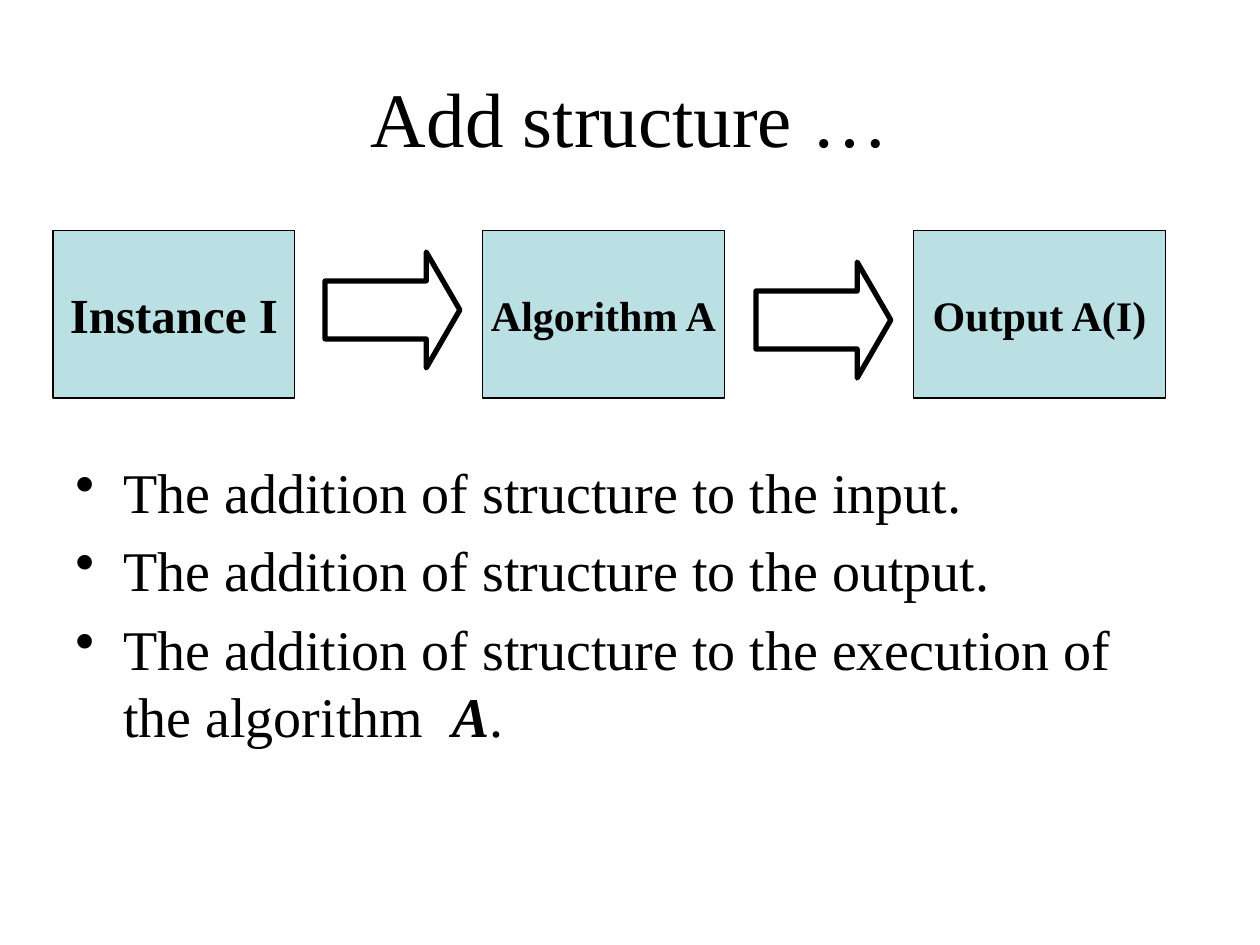
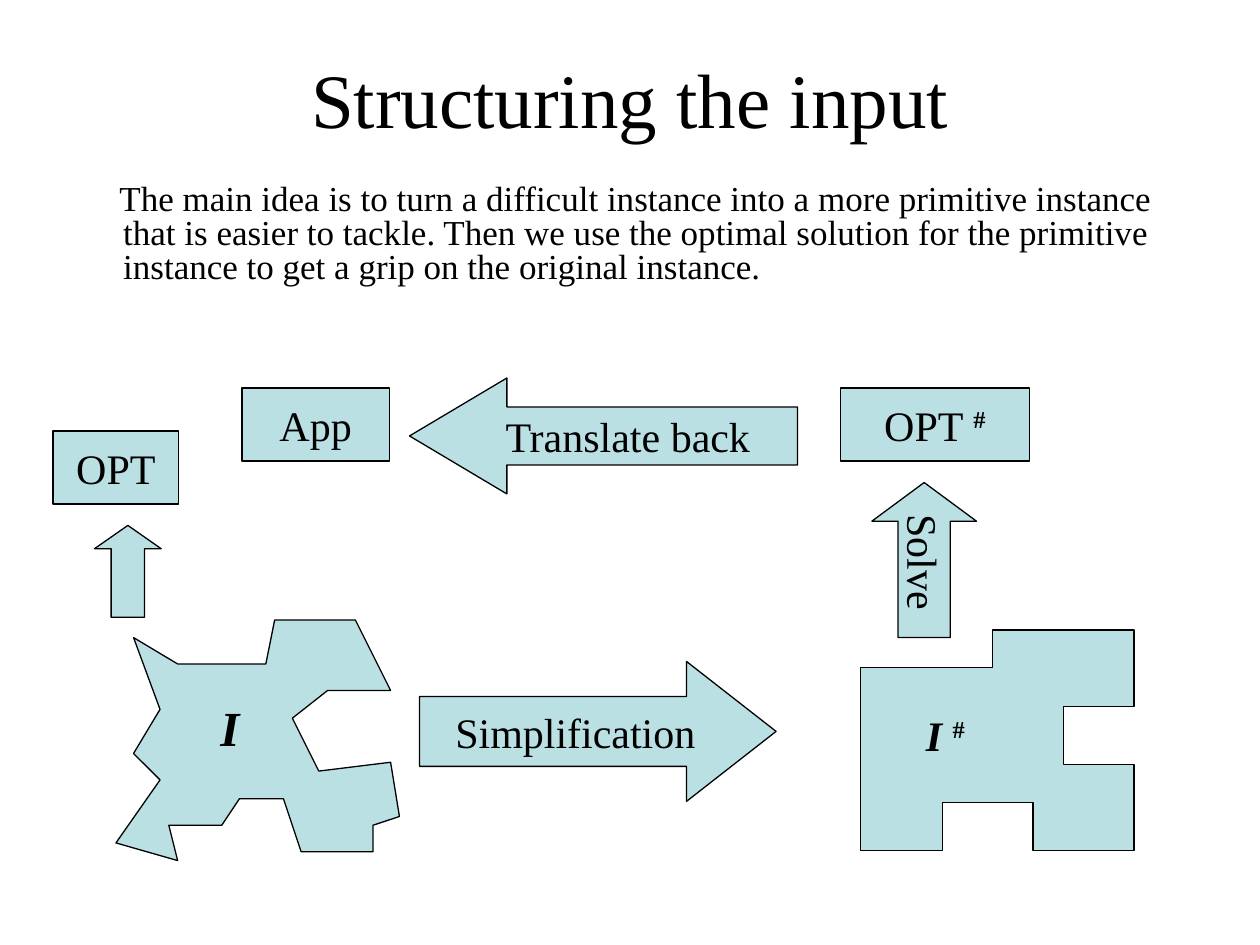
import pptx
import pptx.dml.color
import pptx.enum.shapes
import pptx.enum.text
import pptx.oxml
import pptx.util
from pptx.util import Inches

BLACK = pptx.dml.color.RGBColor(0x00, 0x00, 0x00)
PALE_TEAL = pptx.dml.color.RGBColor(0xBB, 0xE0, 0xE3)
FONT = "Times New Roman"
SHAPES = pptx.enum.shapes.MSO_SHAPE
CENTER = pptx.enum.text.PP_ALIGN.CENTER
MIDDLE = pptx.enum.text.MSO_ANCHOR.MIDDLE


def write(para, text, size=24, bold=False, italic=False, align=None, raised=False):
    """Add one span of text to a paragraph."""
    span = para.add_run()
    span.text = text
    span.font.name = FONT
    span.font.size = pptx.util.Pt(size)
    span.font.bold = bold
    span.font.italic = italic
    span.font.color.rgb = BLACK
    if align is not None:
        para.alignment = align
    if raised:
        span.font._element.set("baseline", "30000")


def style(shape, fill=PALE_TEAL, line_width=0.75):
    """Give a shape its flat fill, outline and centred, unwrapped text frame."""
    shape.shadow.inherit = False
    if fill is None:
        shape.fill.background()
    else:
        shape.fill.solid()
        shape.fill.fore_color.rgb = fill
    shape.line.color.rgb = BLACK
    shape.line.width = pptx.util.Pt(line_width)
    shape.text_frame.word_wrap = False
    shape.text_frame.vertical_anchor = MIDDLE


deck = pptx.Presentation()
deck.slide_width = Inches(10)
deck.slide_height = Inches(7.5)

# Pages with their titles
pages = []
for title, height in [("Add structure …", 1.25), ("Structuring the input", 0.95)]:
    page = deck.slides.add_slide(deck.slide_layouts[6])
    box = page.shapes.add_textbox(Inches(0.5), Inches(0.3), Inches(9), Inches(height))
    box.text_frame.word_wrap = True
    box.text_frame.vertical_anchor = MIDDLE
    write(box.text_frame.paragraphs[0], title, size=44, align=CENTER)
    pages.append(page)
structure_page, input_page = pages

# Slide 1: bullet list
bullets = [
    [("The addition of structure to the input", {}), (".", {"italic": True})],
    [("The addition of structure to the output.", {})],
    [("The addition of structure to the execution of the algorithm  ", {}),
     ("A", {"bold": True, "italic": True}), (".", {})],
]
box = structure_page.shapes.add_textbox(Inches(0.5), Inches(3.58), Inches(9), Inches(3.12))
box.text_frame.word_wrap = True
for index, spans in enumerate(bullets):
    para = box.text_frame.paragraphs[0] if index == 0 else box.text_frame.add_paragraph()
    para.space_before = pptx.util.Pt(6.4)
    for text, options in spans:
        write(para, text, size=32, **options)
    properties = para._p.get_or_add_pPr()
    properties.set("marL", str(Inches(0.38)))
    properties.set("indent", str(Inches(-0.38)))
    bullet = pptx.oxml.parse_xml(
        '<a:buChar xmlns:a="http://schemas.openxmlformats.org/drawingml/2006/main" char="•"/>')
    properties.append(bullet)

# Slide 1: instance, algorithm and output boxes
for left, width, text, size in [
    (0.42, 1.92, "Instance I", 28),
    (3.83, 1.92, "Algorithm A", 24),
    (7.25, 2, "Output A(I)", 24),
]:
    stage = structure_page.shapes.add_shape(
        SHAPES.RECTANGLE, Inches(left), Inches(1.83), Inches(width), Inches(1.33))
    style(stage)
    write(stage.text_frame.paragraphs[0], text, size=size, bold=True, align=CENTER)

# Slide 1: arrows between the boxes
for left, top in [(2.58, 2), (6, 2.08)]:
    arrow = structure_page.shapes.add_shape(
        SHAPES.RIGHT_ARROW, Inches(left), Inches(top), Inches(1.07), Inches(0.92))
    arrow.adjustments[1] = 0.29
    style(arrow, fill=None, line_width=3)

# Slide 2: main idea
box = input_page.shapes.add_textbox(Inches(0.5), Inches(1.42), Inches(9), Inches(1.33))
box.text_frame.word_wrap = True
para = box.text_frame.paragraphs[0]
para.line_spacing = 0.8
para.space_before = pptx.util.Pt(4)
para._p.get_or_add_pPr().set("marL", str(Inches(0.38)))
para._p.get_or_add_pPr().set("indent", str(Inches(-0.03)))
write(para, "The main idea is to turn a difficult instance into a more primitive instance "
      "that is easier to tackle. Then we use the optimal solution for the primitive "
      "instance to get a grip on the original instance.", size=20)

# Slide 2: outlines of the two instances, in hundredths of an inch
difficult_instance = [
    (134, 655), (176, 655), (190, 634), (225, 634), (239, 676), (296, 676),
    (296, 655), (317, 648), (310, 605), (253, 612), (232, 570), (260, 548),
    (310, 548), (282, 492), (218, 492), (211, 527), (141, 527), (106, 506),
    (127, 563), (106, 598), (127, 619), (92, 669), (141, 683),
]
primitive_instance = [
    (683, 675), (748, 675), (748, 637), (820, 637), (820, 675), (900, 675),
    (900, 607), (844, 607), (844, 561), (900, 561), (900, 500), (788, 500),
    (788, 530), (683, 530),
]
for points in [difficult_instance, primitive_instance]:
    builder = input_page.shapes.build_freeform(*points[0], scale=Inches(0.01))
    builder.add_line_segments(points[1:], close=True)
    style(builder.convert_to_shape())

# Slide 2: solutions and the steps between them
for kind, left, top, width, height, head, text in [
    (SHAPES.RIGHT_ARROW, 3.33, 5.25, 2.83, 1.11, 0.64, "Simplification"),
    (SHAPES.UP_ARROW, 6.92, 3.83, 0.83, 1.23, 0.37, "Solve"),
    (SHAPES.RECTANGLE, 6.67, 3.08, 1.5, 0.58, None, "OPT "),
    (SHAPES.LEFT_ARROW, 3.25, 3, 3.08, 0.92, 0.84, "Translate back"),
    (SHAPES.UP_ARROW, 0.75, 4.17, 0.53, 0.73, 0.35, None),
    (SHAPES.RECTANGLE, 0.42, 3.42, 1, 0.58, None, "OPT"),
    (SHAPES.RECTANGLE, 1.92, 3.08, 1.17, 0.58, None, "App"),
]:
    step = input_page.shapes.add_shape(
        kind, Inches(left), Inches(top), Inches(width), Inches(height))
    style(step)
    if head:
        step.adjustments[1] = head
    if text:
        write(step.text_frame.paragraphs[0], text, align=CENTER)
    if text == "Solve":
        step.text_frame._txBody.bodyPr.set("vert", "eaVert")
    if text == "OPT ":
        write(step.text_frame.paragraphs[0], "#", bold=True, raised=True)

# Slide 2: instance names
for left, top, width, height, text, size, mark in [
    (1.65, 5.49, 0.35, 0.57, "I", 28, None),
    (7.25, 5.58, 0.53, 0.5, "I ", 24, "#"),
]:
    box = input_page.shapes.add_textbox(
        Inches(left), Inches(top), Inches(width), Inches(height))
    box.text_frame.word_wrap = False
    box.text_frame.auto_size = pptx.enum.text.MSO_AUTO_SIZE.SHAPE_TO_FIT_TEXT
    para = box.text_frame.paragraphs[0]
    write(para, text, size=size, bold=True, italic=True)
    if mark:
        write(para, mark, size=size, bold=True, raised=True)

deck.save("out.pptx")
